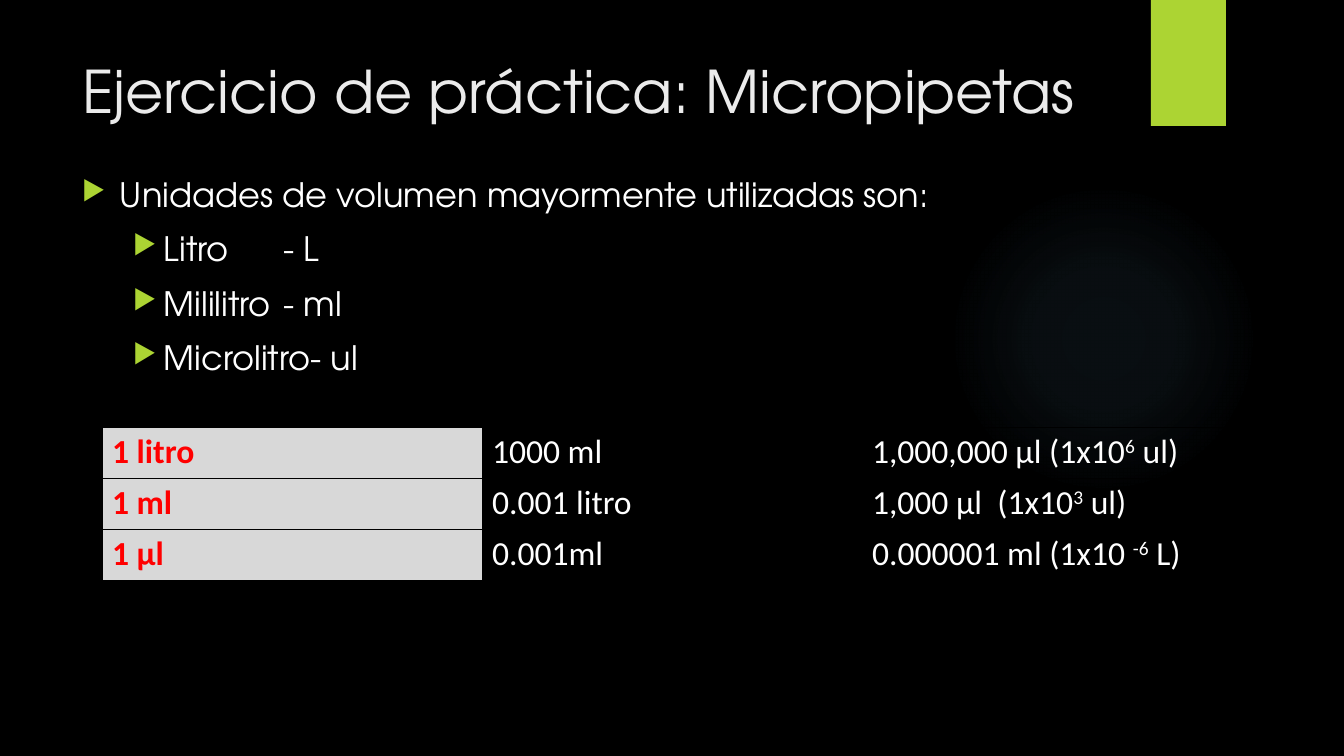
"""Build a slide on micropipette volume units with a conversion table."""
from lxml.etree import SubElement
from pptx import Presentation
from pptx.dml.color import RGBColor
from pptx.enum.shapes import MSO_SHAPE
from pptx.enum.text import MSO_ANCHOR, MSO_AUTO_SIZE, PP_ALIGN
from pptx.oxml import parse_xml
from pptx.oxml.ns import nsdecls, qn
from pptx.util import Pt

PX = 12192000 / 1344
FACE = "TeX Gyre Adventor"
LIME = "ACD433"


def box(*sides):
    return [round(side * PX) for side in sides]


def style(font, color, **looks):
    font.color.rgb = RGBColor.from_string(color)
    for name, value in looks.items():
        setattr(font, name, value)


deck = Presentation()
deck.slide_width, deck.slide_height = box(1344, 756)
slide = deck.slides.add_slide(deck.slide_layouts[5])
slide.background.fill.solid()
slide.background.fill.fore_color.rgb = RGBColor.from_string("000000")
shapes = slide.shapes

glow = shapes.add_shape(MSO_SHAPE.OVAL, *box(949, 184, 310, 310))
stops = "".join(
    f'<a:gs pos="{pos}000"><a:srgbClr val="7AC4F0"><a:alpha val="{alpha}000"/></a:srgbClr></a:gs>'
    for pos, alpha in [(0, 7), (36, 6), (69, 0), (100, 0)])
glow.fill.background()
blank = glow._element.spPr.find(qn("a:noFill"))
blank.getparent().replace(blank, parse_xml(
    f'<a:gradFill {nsdecls("a")}><a:gsLst>{stops}</a:gsLst><a:path path="circle">'
    '<a:fillToRect l="50000" t="50000" r="50000" b="50000"/></a:path></a:gradFill>'))
flag = shapes.add_shape(MSO_SHAPE.RECTANGLE, *box(1151, 0, 75, 126))
flag.fill.solid()
flag.fill.fore_color.rgb = RGBColor.from_string(LIME)
for shape in (glow, flag):
    shape.shadow.inherit = False
    shape.line.fill.background()

title = shapes.title
title.left, title.top, title.width, title.height = box(72, 50, 1037, 154)
title.text = "Ejercicio de práctica: Micropipetas"
frame = title.text_frame
frame.word_wrap = True
frame.auto_size = MSO_AUTO_SIZE.NONE
frame.vertical_anchor = MSO_ANCHOR.TOP
frame.paragraphs[0].alignment = PP_ALIGN.LEFT
style(frame.paragraphs[0].runs[0].font, "EBEBEB", name=FACE, size=Pt(42))

units = [
    (0, "Unidades de volumen mayormente utilizadas son:"),
    (1, "Litro\t\t- L"),
    (1, "Mililitro\t- ml"),
    (1, "Microlitro- ul"),
]
body = shapes.add_textbox(*box(72, 169, 1200, 463)).text_frame
body.word_wrap = True
for row, (level, text) in enumerate(units):
    para = body.paragraphs[0] if row == 0 else body.add_paragraph()
    para.level = level
    props = para._p.get_or_add_pPr()
    left, hang = [box(38, -38), box(82, -31)][level]
    for key, value in {"marL": left, "indent": hang, "defTabSz": 457200}.items():
        props.set(key, str(value))
    SubElement(SubElement(props, qn("a:buClr")), qn("a:srgbClr"), val=LIME)
    SubElement(props, qn("a:buSzPct"), val="80000")
    SubElement(props, qn("a:buChar"), char="▶")
    if row:
        para.space_before = Pt(10)
    run = para.add_run()
    run.text = text
    style(run.font, "FFFFFF", name=FACE, size=Pt(24))

values = [
    [["1 litro"], ["1000 ml"], ["1,000,000 μl (1x10", "6", " ul)"]],
    [["1 ml"], ["0.001 litro"], ["1,000 μl  (1x10", "3", " ul)"]],
    [["1 μl"], ["0.001ml"], ["0.000001 ml (1x10 ", "-6", " L)"]],
]
table = shapes.add_table(3, 3, *box(102, 427, 1140, 153)).table
table.first_row = table.horz_banding = False
for row, line in enumerate(values):
    for col, parts in enumerate(line):
        cell = table.cell(row, col)
        cell.vertical_anchor = MSO_ANCHOR.MIDDLE
        for side in "LRTB":
            edge = SubElement(cell._tc.get_or_add_tcPr(), qn(f"a:ln{side}"), w="6350")
            SubElement(SubElement(edge, qn("a:solidFill")), qn("a:srgbClr"), val="000000")
        if col == 0:
            cell.fill.solid()
            cell.fill.fore_color.rgb = RGBColor.from_string("D8D8D8")
        else:
            cell.fill.background()
        for spot, part in enumerate(parts):
            run = cell.text_frame.paragraphs[0].add_run()
            run.text = part
            style(run.font, "FFFFFF" if col else "FF0000",
                  name="Calibri", size=Pt(24), bold=col == 0)
            if spot == 1:
                run._r.get_or_add_rPr().set("baseline", "30000")

deck.save("out.pptx")
